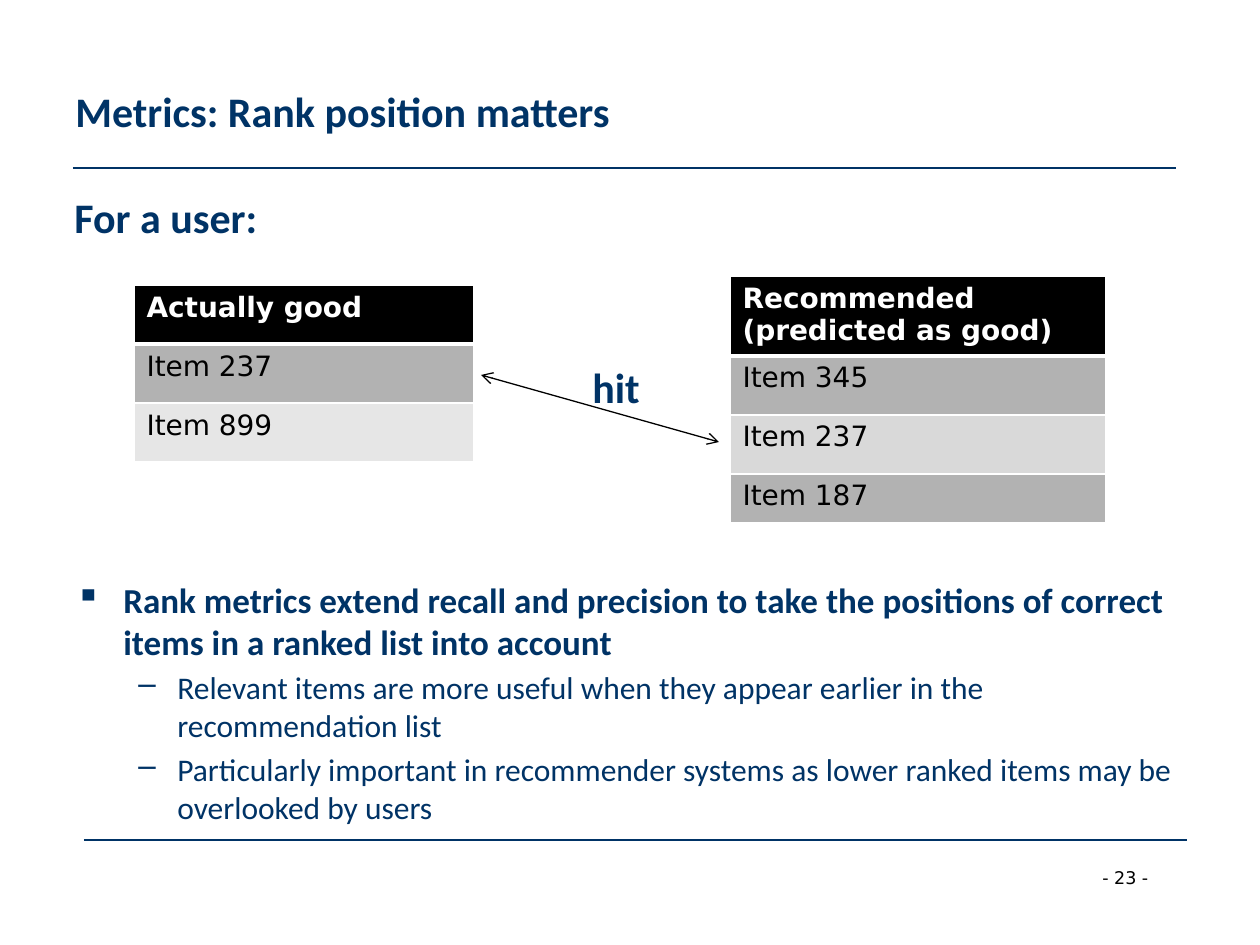
"""Build the slide on rank position in recommender metrics."""
from dataclasses import dataclass

from lxml.etree import SubElement
from pptx import Presentation
from pptx.dml.color import RGBColor
from pptx.enum.shapes import MSO_CONNECTOR
from pptx.enum.text import MSO_ANCHOR
from pptx.oxml import parse_xml
from pptx.oxml.ns import nsdecls, qn
from pptx.util import Emu, Pt


@dataclass(frozen=True)
class Theme:
    navy: str = "003366"
    black: str = "000000"
    white: str = "FFFFFF"
    dark_band: str = "B2B2B2"
    light_band: str = "E6E6E6"
    middle_band: str = "D9D9D9"
    heading_font: str = "Calibri"
    table_font: str = "DejaVu Sans"
    heading_size: int = 24
    table_size: int = 16
    number_size: int = 10
    rule_width: float = 0.75


THEME = Theme()
PX = 914400 / 126
SLIDE_SIZE = (1260, 945)

RULES = [
    ((73, 168), (1176, 168)),
    ((84, 840), (1187, 840)),
]
HIT_ARROW = ((481, 375), (719, 442))

HEADINGS = [
    ("Metrics: Rank position matters", (63, 32, 1134, 157), True),
    ("For a user:", (62, 185, 210, 63), False),
    ("hit", (580, 355, 73, 63), False),
]
PAGE_NUMBER = ("- 23 -", (1090, 861, 96, 34))

TABLES = [
    {
        "origin": (134, 285),
        "width": 340,
        "rows": [
            ("Actually good", 59, THEME.black),
            ("Item 237", 59, THEME.dark_band),
            ("Item 899", 59, THEME.light_band),
        ],
    },
    {
        "origin": (730, 276),
        "width": 376,
        "rows": [
            ("Recommended\n(predicted as good)", 77, THEME.black),
            ("Item 345", 59, THEME.dark_band),
            ("Item 237", 59, THEME.middle_band),
            ("Item 187", 49, THEME.dark_band),
        ],
    },
]

BODY_BOX = (63, 572, 1134, 262)
BODY = [
    (0, "Rank metrics extend recall and precision to take the positions "
        "of correct items in a ranked list into account"),
    (1, "Relevant items are more useful when they appear earlier in the "
        "recommendation list"),
    (1, "Particularly important in recommender systems as lower ranked "
        "items may be overlooked by users"),
]
LEVELS = [
    {"bullet": "▪", "margin": 48, "hanging": 48, "size": 20, "bold": True, "before": 0},
    {"bullet": "–", "margin": 102, "hanging": 39, "size": 18, "bold": False, "before": 3.6},
]


def emu(*pixels):
    return [Emu(round(value * PX)) for value in pixels]


def style_font(font, name, size, color, bold=False):
    font.name = name
    font.size = Pt(size)
    font.bold = bold
    font.color.rgb = RGBColor.from_string(color)


def add_text(slide, text, box, font_style, wrap=False):
    shape = slide.shapes.add_textbox(*emu(*box))
    frame = shape.text_frame
    frame.word_wrap = wrap
    frame.text = text
    style_font(frame.paragraphs[0].runs[0].font, *font_style)
    return frame


def add_line(slide, ends, color, arrows=False):
    start, end = ends
    line = slide.shapes.add_connector(MSO_CONNECTOR.STRAIGHT, *emu(*start, *end))
    line.line.width = Pt(THEME.rule_width)
    line.line.color.rgb = RGBColor.from_string(color)
    properties = line._element.spPr
    if arrows:
        for tag in ("a:headEnd", "a:tailEnd"):
            SubElement(properties.find(qn("a:ln")), qn(tag), type="arrow")
    SubElement(properties, qn("a:effectLst"))


def set_borders(cell, is_header):
    properties = cell._tc.get_or_add_tcPr()
    for index, side in enumerate("LRTB"):
        points = 3 if is_header and side == "B" else 1
        properties.insert(index, parse_xml(
            f'<a:ln{side} {nsdecls("a")} w="{Pt(points)}"><a:solidFill>'
            f'<a:srgbClr val="{THEME.white}"/></a:solidFill></a:ln{side}>'))


def add_item_table(slide, origin, width, rows):
    height = sum(row_height for _, row_height, _ in rows)
    table = slide.shapes.add_table(len(rows), 1, *emu(*origin, width, height)).table
    for index, (text, row_height, fill) in enumerate(rows):
        is_header = index == 0
        table.rows[index].height = emu(row_height)[0]
        cell = table.cell(index, 0)
        cell.text = text
        cell.fill.solid()
        cell.fill.fore_color.rgb = RGBColor.from_string(fill)
        set_borders(cell, is_header)
        color = THEME.white if is_header else THEME.black
        for paragraph in cell.text_frame.paragraphs:
            style_font(paragraph.runs[0].font, THEME.table_font,
                       THEME.table_size, color, is_header)


def add_body(slide):
    frame = slide.shapes.add_textbox(*emu(*BODY_BOX)).text_frame
    frame.word_wrap = True
    frame.text = "\n".join(text for _, text in BODY)
    for paragraph, (depth, _) in zip(frame.paragraphs, BODY):
        level = LEVELS[depth]
        paragraph.level = depth
        properties = paragraph._p.get_or_add_pPr()
        margin, indent = emu(level["margin"], -level["hanging"])
        properties.set("marL", str(margin))
        properties.set("indent", str(indent))
        SubElement(properties, qn("a:buChar"), char=level["bullet"])
        paragraph.space_before = Pt(level["before"])
        style_font(paragraph.runs[0].font, THEME.heading_font,
                   level["size"], THEME.navy, level["bold"])


def main():
    presentation = Presentation()
    presentation.slide_width, presentation.slide_height = emu(*SLIDE_SIZE)
    slide = presentation.slides.add_slide(presentation.slide_layouts[6])
    for rule in RULES:
        add_line(slide, rule, THEME.navy)
    add_text(slide, *PAGE_NUMBER, (THEME.table_font, THEME.number_size, THEME.black))
    add_body(slide)
    for table in TABLES:
        add_item_table(slide, **table)
    add_line(slide, HIT_ARROW, THEME.black, arrows=True)
    heading_style = (THEME.heading_font, THEME.heading_size, THEME.navy, True)
    for text, box, is_title in HEADINGS:
        frame = add_text(slide, text, box, heading_style, wrap=is_title)
        if is_title:
            frame.vertical_anchor = MSO_ANCHOR.MIDDLE
    presentation.save("out.pptx")


if __name__ == "__main__":
    main()
